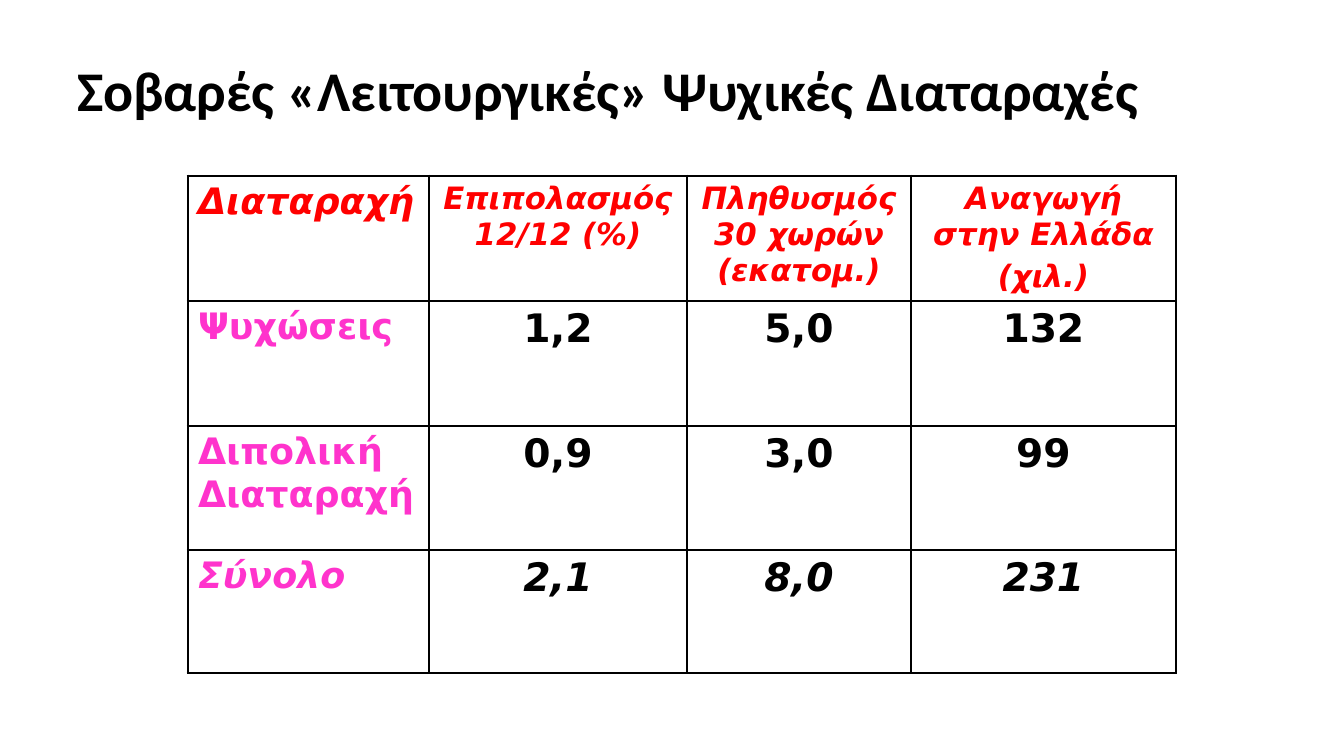
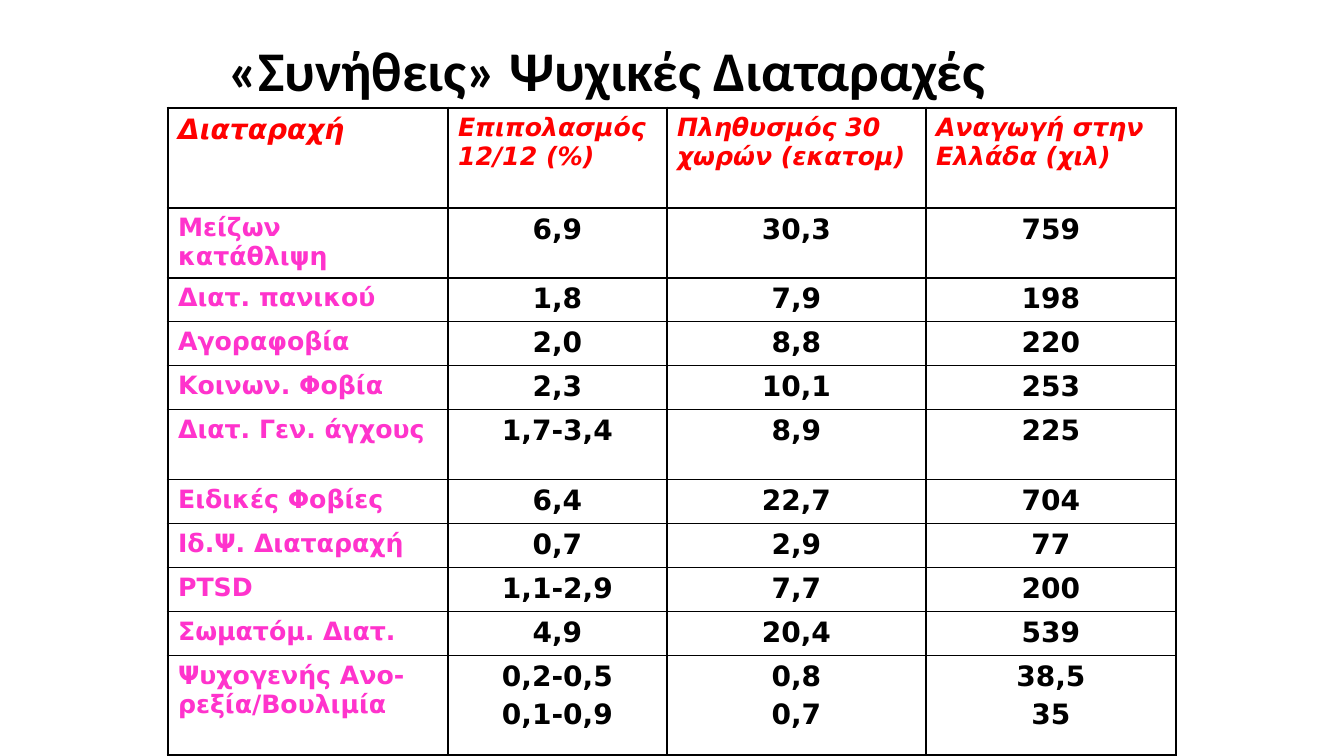
from lxml.etree import SubElement
from pptx import Presentation
from pptx.dml.color import RGBColor
from pptx.enum.text import MSO_ANCHOR, MSO_AUTO_SIZE, PP_ALIGN
from pptx.oxml.ns import qn
from pptx.util import Emu, Pt

# Shared look
PX = 914400 / 100.8
TITLE_FONT, TABLE_FONT = "Calibri", "DejaVu Sans"
BLACK, RED, PINK = "000000", "FF0000", "FF33CC"
INNER_LINE, OUTER_LINE = 1, 2.25

# Table contents: a cell with two paragraphs holds a line break
SEVERE = [
    ["Διαταραχή", "Επιπολασμός 12/12 (%)", "Πληθυσμός 30 χωρών (εκατομ.)",
     "Αναγωγή στην Ελλάδα\n(χιλ.)"],
    ["Ψυχώσεις", "1,2", "5,0", "132"],
    ["Διπολική Διαταραχή", "0,9", "3,0", "99"],
    ["Σύνολο", "2,1", "8,0", "231"],
]
COMMON = [
    ["Διαταραχή", "Επιπολασμός 12/12 (%)", "Πληθυσμός 30 χωρών (εκατομ)",
     "Αναγωγή στην Ελλάδα (χιλ)"],
    ["Μείζων κατάθλιψη", "6,9", "30,3", "759"],
    ["Διατ. πανικού", "1,8", "7,9", "198"],
    ["Αγοραφοβία", "2,0", "8,8", "220"],
    ["Κοινων. Φοβία", "2,3", "10,1", "253"],
    ["Διατ. Γεν. άγχους", "1,7-3,4", "8,9", "225"],
    ["Ειδικές Φοβίες", "6,4", "22,7", "704"],
    ["Ιδ.Ψ. Διαταραχή", "0,7", "2,9", "77"],
    ["PTSD", "1,1-2,9", "7,7", "200"],
    ["Σωματόμ. Διατ.", "4,9", "20,4", "539"],
    ["Ψυχογενής Ανο- ρεξία/Βουλιμία", "0,2-0,5\n0,1-0,9", "0,8\n0,7", "38,5\n35"],
]


def px(length):
    return Emu(round(length * PX))


def rgb(color):
    return RGBColor.from_string(color)


def add_run(paragraph, text, font_name, size, color, italic=False):
    run = paragraph.add_run()
    run.text = text
    font = run.font
    font.name, font.size = font_name, Pt(size)
    font.bold, font.italic = True, italic
    font.color.rgb = rgb(color)


def add_titled_slide(prs, text, left, top, width, height):
    slide = prs.slides.add_slide(prs.slide_layouts[5])
    title = slide.shapes.title
    title.left, title.top = px(left), px(top)
    title.width, title.height = px(width), px(height)
    frame = title.text_frame
    frame.word_wrap = True
    frame.auto_size = MSO_AUTO_SIZE.NONE
    frame.vertical_anchor = MSO_ANCHOR.MIDDLE
    heading = frame.paragraphs[0]
    heading.alignment, heading.line_spacing = PP_ALIGN.LEFT, 0.9
    add_run(heading, text, TITLE_FONT, 40, BLACK)
    return slide


def set_borders(cell, outer_sides):
    properties = cell._tc.get_or_add_tcPr()
    for position, side in enumerate("LRTB"):
        width = OUTER_LINE if side in outer_sides else INNER_LINE
        line = SubElement(properties, qn(f"a:ln{side}"), w=str(Pt(width)))
        fill = SubElement(line, qn("a:solidFill"))
        SubElement(fill, qn("a:srgbClr"), val=BLACK)
        properties.insert(position, line)  # borders come before the fill


def fill_cell(cell, text, size, color, italic, alignment):
    cell.fill.background()
    frame = cell.text_frame
    for index, line in enumerate(text.split("\n")):
        paragraph = frame.add_paragraph() if index else frame.paragraphs[0]
        paragraph.alignment = alignment
        paragraph.space_before = Pt(0.2 * size if index else 0)
        add_run(paragraph, line, TABLE_FONT, size, color, italic)


def add_disorder_table(slide, left, top, widths, heights, rows, sizes,
                       header_alignment, total_row=False):
    """sizes: first heading, other headings, disorder names, values."""
    table = slide.shapes.add_table(len(rows), len(widths), px(left), px(top),
                                   px(sum(widths)), px(sum(heights))).table
    table.first_row = table.horz_banding = False
    for column, width in zip(table.columns, widths):
        column.width = px(width)
    for row, height in zip(table.rows, heights):
        row.height = px(height)

    corner_size, heading_size, name_size, value_size = sizes
    last_row, last_column = len(rows) - 1, len(widths) - 1
    for r, texts in enumerate(rows):
        italic = r == 0 or (total_row and r == last_row)
        for c, text in enumerate(texts):
            if r == 0:
                size, color = (heading_size if c else corner_size), RED
            else:
                size, color = (value_size, BLACK) if c else (name_size, PINK)
            if c == 0:
                alignment = PP_ALIGN.LEFT
            else:
                alignment = PP_ALIGN.CENTER if r else header_alignment
            cell = table.cell(r, c)
            fill_cell(cell, text, size, color, italic, alignment)
            edges = {"L": c == 0, "R": c == last_column,
                     "T": r == 0, "B": r == last_row}
            set_borders(cell, [side for side in edges if edges[side]])


def main():
    prs = Presentation()
    prs.slide_width, prs.slide_height = px(1344), px(756)

    # Severe disorders
    severe = add_titled_slide(prs, "Σοβαρές «Λειτουργικές» Ψυχικές Διαταραχές",
                              67, 30, 1210, 126)
    add_disorder_table(severe, 188, 176, [241, 258, 224, 265],
                       [125, 125, 124, 123], SEVERE, (26, 22, 26, 28),
                       PP_ALIGN.CENTER, total_row=True)

    # Common disorders
    common = add_titled_slide(prs, "«Συνήθεις» Ψυχικές Διαταραχές",
                              218, 30, 907, 86)
    heights = [100, 70] + [44] * 3 + [70] + [44] * 4 + [100]
    add_disorder_table(common, 168, 108, [280, 219, 259, 250], heights, COMMON,
                       (20, 18, 18, 20), PP_ALIGN.LEFT)

    prs.save("out.pptx")


if __name__ == "__main__":
    main()
